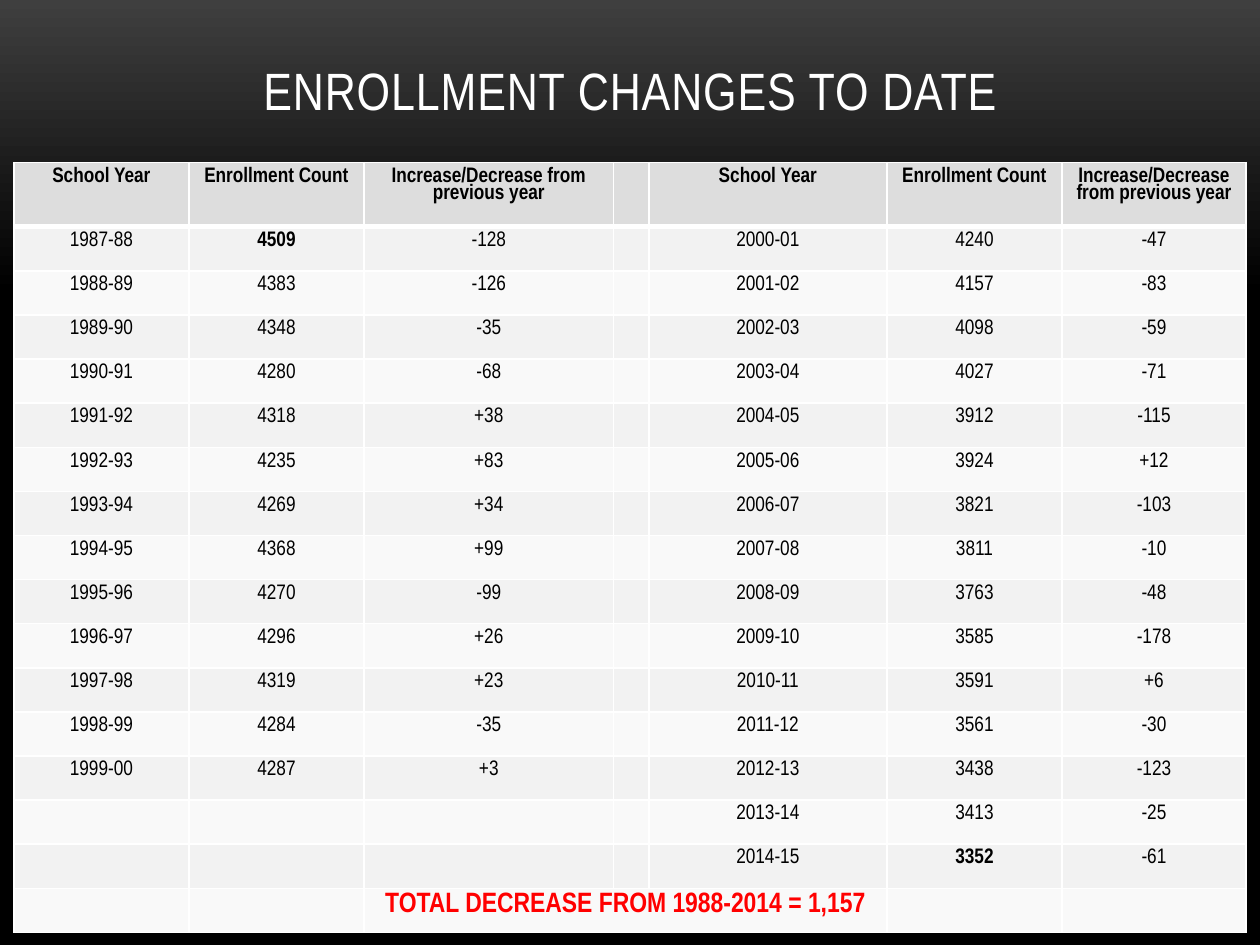
import lxml.etree
import pptx
import pptx.dml.color
import pptx.enum.text
import pptx.oxml.ns
import pptx.util

Inches = pptx.util.Inches
qn = pptx.oxml.ns.qn

FONT = "Arial Narrow"
HEADINGS = ["School Year", "Enrollment Count", "Increase/Decrease from previous year"]
COLUMN_WIDTHS = [1.39, 1.39, 1.98, 0.28, 1.89, 1.39, 1.46]
HEADER_HEIGHT, ROW_HEIGHT = 0.51, 0.35

# Each block: first year, first column, then (enrollment, change) per school year
BLOCKS = [
    (1987, 0, [("4509", "-128"), ("4383", "-126"), ("4348", "-35"), ("4280", "-68"),
               ("4318", "+38"), ("4235", "+83"), ("4269", "+34"), ("4368", "+99"),
               ("4270", "-99"), ("4296", "+26"), ("4319", "+23"), ("4284", "-35"),
               ("4287", "+3")]),
    (2000, 4, [("4240", "-47"), ("4157", "-83"), ("4098", "-59"), ("4027", "-71"),
               ("3912", "-115"), ("3924", "+12"), ("3821", "-103"), ("3811", "-10"),
               ("3763", "-48"), ("3585", "-178"), ("3591", "+6"), ("3561", "-30"),
               ("3438", "-123"), ("3413", "-25"), ("3352", "-61")]),
]
BOLD_COUNTS = {"4509", "3352"}  # first and last enrollment
TOTAL = "TOTAL DECREASE FROM 1988-2014 = 1,157"


def rgb(color):
    return pptx.dml.color.RGBColor.from_string(color)


def add_text(tf, text, size=12, color="000000", bold=False, line_spacing=None, tracking=None):
    p = tf.paragraphs[0]
    p.alignment = pptx.enum.text.PP_ALIGN.CENTER
    if line_spacing:
        p.line_spacing = line_spacing
    r = p.add_run()
    r.text = text
    r.font.name = FONT
    r.font.size = pptx.util.Pt(size)
    r.font.bold = bold
    r.font.color.rgb = rgb(color)
    if tracking:
        r.font._element.set("spc", str(int(tracking * 100)))


def set_borders(cell, color="FFFFFF", top=1, bottom=1):
    tc_pr = cell._tc.get_or_add_tcPr()
    for side, width in (("L", 1), ("R", 1), ("T", top), ("B", bottom)):
        ln = lxml.etree.SubElement(tc_pr, qn(f"a:ln{side}"), w=str(pptx.util.Pt(width)))
        fill = lxml.etree.SubElement(ln, qn("a:solidFill"))
        lxml.etree.SubElement(fill, qn("a:srgbClr"), val=color)


def style_cell(cell, row):
    set_borders(cell, top=3 if row == 1 else 1, bottom=3 if row == 0 else 1)
    cell.fill.solid()
    cell.fill.fore_color.rgb = rgb("DDDDDD" if row == 0 else "F2F2F2" if row % 2 else "F9F9F9")
    # Keeps empty cells from stretching their row
    p = cell.text_frame.paragraphs[0]
    lxml.etree.SubElement(p._p, qn("a:endParaRPr"), sz="1200")


def set_background(s):
    fill = s.background.fill
    fill.gradient()
    fill.gradient_angle = 270
    for stop, position, color in zip(fill.gradient_stops, (0, 0.31), ("3F3F3F", "000000")):
        stop.position = position
        stop.color.rgb = rgb(color)


def add_title(s, text):
    sp = s.shapes.title
    sp.left, sp.top, sp.width, sp.height = map(Inches, (0.67, 0.18, 8.67, 0.83))
    tf = sp.text_frame
    tf.word_wrap = True
    tf.auto_size = pptx.enum.text.MSO_AUTO_SIZE.NONE
    tf.vertical_anchor = pptx.enum.text.MSO_ANCHOR.BOTTOM
    add_text(tf, text, size=30, color="FFFFFF", tracking=0.5)


def add_enrollment_table(s):
    rows = max(len(records) for _, _, records in BLOCKS) + 2
    height = HEADER_HEIGHT + ROW_HEIGHT * (rows - 1)
    table = s.shapes.add_table(rows, len(COLUMN_WIDTHS), Inches(0.11), Inches(1.29),
                               Inches(sum(COLUMN_WIDTHS)), Inches(height)).table
    for column, width in zip(table.columns, COLUMN_WIDTHS):
        column.width = Inches(width)
    for i, row in enumerate(table.rows):
        row.height = Inches(ROW_HEIGHT if i else HEADER_HEIGHT)
        for cell in row.cells:
            style_cell(cell, i)

    # Headings and yearly figures
    for first_year, first_col, records in BLOCKS:
        lines = [HEADINGS]
        for year, (count, change) in enumerate(records, first_year):
            lines.append([f"{year}-{(year + 1) % 100:02d}", count, change])
        for i, line in enumerate(lines):
            for j, text in enumerate(line, first_col):
                add_text(table.cell(i, j).text_frame, text, line_spacing=0.85,
                         bold=i == 0 or text in BOLD_COUNTS)

    # Total across the middle columns
    total = table.cell(rows - 1, 2)
    total.merge(table.cell(rows - 1, 4))
    add_text(total.text_frame, TOTAL, size=16, color="FF0000", bold=True, line_spacing=0.85)


def main():
    prs = pptx.Presentation()
    prs.slide_width, prs.slide_height = Inches(10), Inches(7.5)
    s = prs.slides.add_slide(prs.slide_layouts[5])
    set_background(s)
    add_title(s, "ENROLLMENT CHANGES TO DATE")
    add_enrollment_table(s)
    prs.save("out.pptx")


if __name__ == "__main__":
    main()
